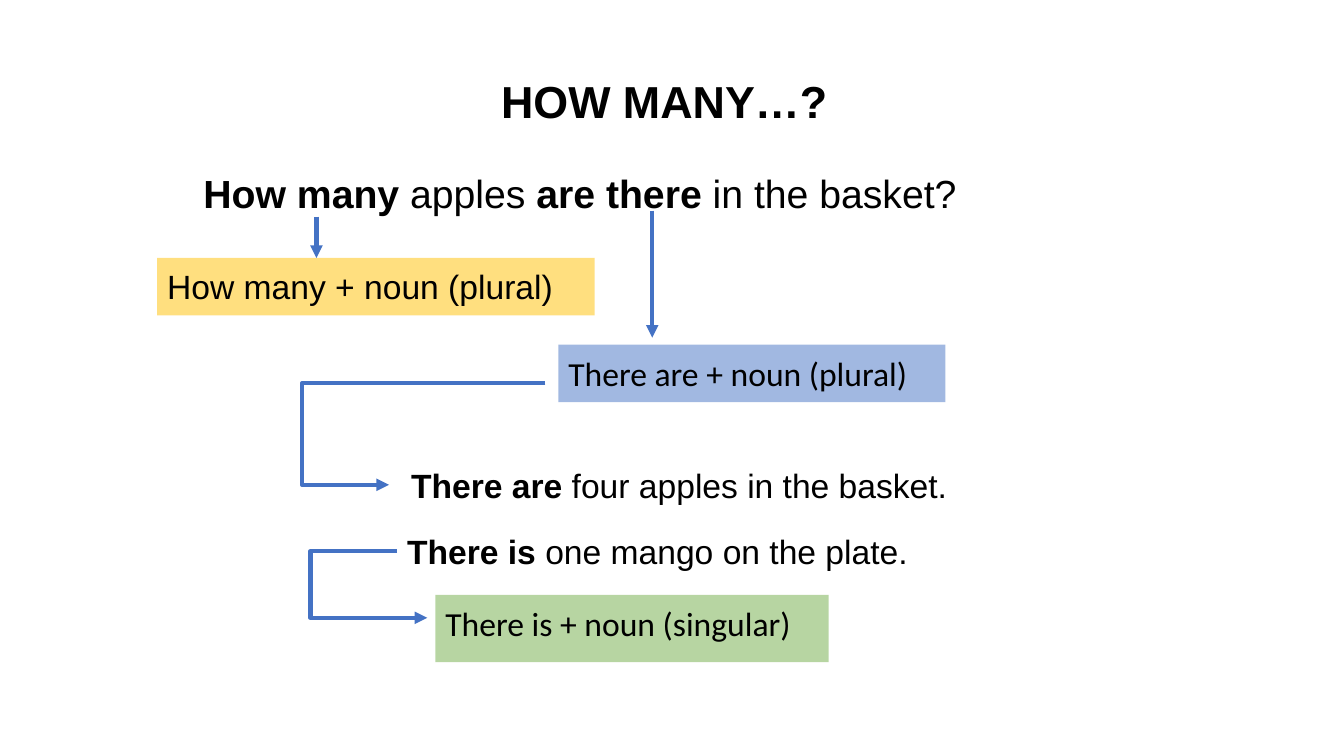
from lxml.etree import SubElement
from pptx import Presentation
from pptx.dml.color import RGBColor
from pptx.enum.shapes import MSO_CONNECTOR, MSO_SHAPE
from pptx.enum.text import MSO_ANCHOR, MSO_AUTO_SIZE, PP_ALIGN
from pptx.oxml.ns import qn
from pptx.util import Inches, Pt

WIDTH, HEIGHT = Inches(13.33), Inches(7.5)
COL, ROW = WIDTH / 100, HEIGHT / 100
BLUE = "4472C4"


def color(hex_string):
    return RGBColor.from_string(hex_string)


def place(origin, x, y, w, h):
    """Turn a cell of the 100 by 100 grid, counted from origin, into lengths."""
    return (round((origin[0] + x) * COL), round((origin[1] + y) * ROW),
            round(w * COL), round(h * ROW))


def write(sp, parts, size, font="Arial", spacing=1.0):
    """Fill a shape with one line made of (text, bold) parts."""
    tf = sp.text_frame
    tf.word_wrap = True
    tf.auto_size = MSO_AUTO_SIZE.NONE
    tf.vertical_anchor = MSO_ANCHOR.TOP
    p = tf.paragraphs[0]
    p.alignment = PP_ALIGN.LEFT
    p.line_spacing = spacing
    for text, bold in parts:
        r = p.add_run()
        r.text = text
        r.font.name, r.font.size, r.font.bold = font, Pt(size), bold
        r.font.color.rgb = color("000000")


def add_sentence(s, box, parts, size=24, spacing=1.0):
    write(s.shapes.add_textbox(*box), parts, size, spacing=spacing)


def add_rule(s, box, text, fill, font="Calibri"):
    sp = s.shapes.add_shape(MSO_SHAPE.RECTANGLE, *box)
    sp.shadow.inherit = False
    sp.fill.solid()
    sp.fill.fore_color.rgb = color(fill)
    srgb = sp.fill._xPr.find(".//" + qn("a:srgbClr"))
    SubElement(srgb, qn("a:alpha"), val="50000")
    sp.line.fill.background()
    write(sp, [(text, False)], 24, font, 1.07)


def add_arrow(s, origin, start, end, bend=None):
    """Draw a straight arrow, or an elbow that turns at column bend."""
    kind = MSO_CONNECTOR.STRAIGHT if bend is None else MSO_CONNECTOR.ELBOW
    x1, y1, _, _ = place(origin, *start, 0, 0)
    x2, y2, _, _ = place(origin, *end, 0, 0)
    c = s.shapes.add_connector(kind, x1, y1, x2, y2)
    c.line.color.rgb = color(BLUE)
    c.line.width = Pt(3)
    SubElement(c.line._get_or_add_ln(), qn("a:tailEnd"), type="triangle")
    sp_pr = c._element.spPr
    SubElement(sp_pr, qn("a:effectLst"))
    if bend is not None:
        share = (bend - start[0]) / (end[0] - start[0])
        guides = sp_pr.find(".//" + qn("a:avLst"))
        SubElement(guides, qn("a:gd"), name="adj1", fmla=f"val {round(share * 100000)}")


def add_title(s, origin):
    title = s.shapes.title
    title.left, title.top, title.width, title.height = place(origin, 0, 0, 29.18, 8.67)
    write(title, [("HOW MANY…?", True)], 32, spacing=1.07)


def add_question(s, origin):
    add_sentence(s, place(origin, 4.4, 1.73, 60.83, 7.6),
                 [("How many ", True), ("apples ", False),
                  ("are there", True), (" in the basket?", False)], 28)
    add_rule(s, place(origin, 1.7, 14.13, 32.55, 7.6),
             "How many + noun (plural)", "FFC000", "Arial")
    add_arrow(s, origin, (13.55, 8.67), (13.55, 14.13))
    add_arrow(s, origin, (38.53, 7.87), (38.53, 24.67))


def add_answers(s, origin):
    add_rule(s, place(origin, 21.55, 0.6, 28.8, 7.6), "There are + noun (plural)", BLUE)
    add_arrow(s, origin, (20.58, 5.67), (8.95, 19.13), bend=2.5)
    add_sentence(s, place(origin, 9.85, 15.53, 46.28, 6.8),
                 [("There are", True), (" four apples in the basket.", False)], spacing=1.07)
    add_sentence(s, place(origin, 9.55, 24.6, 40.88, 6.67),
                 [("There is", True), (" one mango on the plate.", False)])
    add_arrow(s, origin, (9.55, 27.93), (11.8, 36.73), bend=3.1)
    add_rule(s, place(origin, 12.4, 33.67, 29.25, 8.93), "There is + noun (singular)", "70AD47")


def main():
    prs = Presentation()
    prs.slide_width, prs.slide_height = WIDTH, HEIGHT
    s = prs.slides.add_slide(prs.slide_layouts[5])
    add_title(s, (36.53, 8.53))
    add_question(s, (10, 20))
    add_answers(s, (20, 45))
    prs.save("out.pptx")


if __name__ == "__main__":
    main()
